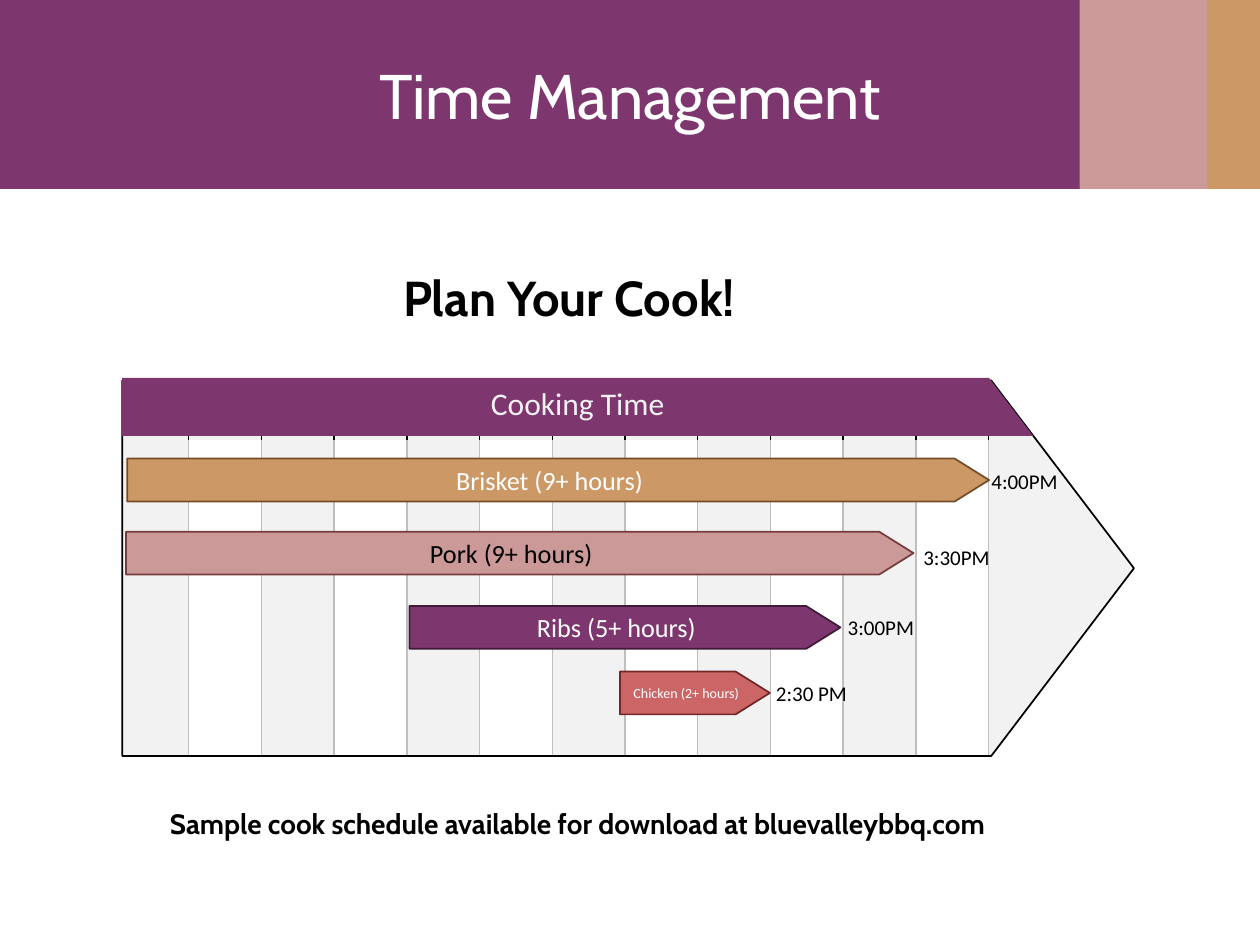
import pptx
import pptx.util
import pptx.dml.color
import pptx.enum.shapes
import pptx.enum.text
import pptx.oxml
import pptx.oxml.ns

Inches = pptx.util.Inches
Pt = pptx.util.Pt
SHAPE = pptx.enum.shapes.MSO_SHAPE
ALIGN = pptx.enum.text.PP_ALIGN
ANCHOR = pptx.enum.text.MSO_ANCHOR


def paint(target, color):
    if hasattr(target, "solid"):
        target.solid()
        target = target.fore_color
    target.rgb = pptx.dml.color.RGBColor.from_string(color)


def write(box, text, font, size, color, align=ALIGN.LEFT, anchor=ANCHOR.TOP, bold=False, wrap=True):
    frame = box.text_frame
    frame.word_wrap = wrap
    frame.vertical_anchor = anchor
    para = frame.paragraphs[0]
    para.alignment = align
    span = para.add_run()
    span.text = text
    span.font.name = font
    span.font.size = Pt(size)
    span.font.bold = bold
    paint(span.font.color, color)


deck = pptx.Presentation()
deck.slide_width = Inches(10)
deck.slide_height = Inches(7.5)
page = deck.slides.add_slide(deck.slide_layouts[6])

bands = [(9.43, 0.57, "CC9966"), (8.53, 1.05, "CC9999"), (0, 8.57, "7E366F")]
for left, width, color in bands:
    band = page.shapes.add_shape(SHAPE.RECTANGLE, Inches(left), 0, Inches(width), Inches(1.5))
    band.shadow.inherit = False
    paint(band.fill, color)
    band.line.fill.background()

title = page.shapes.add_textbox(Inches(0.5), Inches(0.08), Inches(9), Inches(1.33))
write(title, "Time Management", "Cabin", 36, "FFFFFF", ALIGN.CENTER, ANCHOR.MIDDLE)

timeline = page.shapes.add_shape(SHAPE.PENTAGON, Inches(0.97), Inches(3.02), Inches(8.03), Inches(2.98))
timeline.adjustments[0] = 0.38
timeline.shadow.inherit = False
paint(timeline.fill, "F2F2F2")
paint(timeline.line.color, "000000")
timeline.line.width = Pt(1)

columns = 12
grid = page.shapes.add_table(2, columns, Inches(0.92), Inches(3.01), Inches(6.93), Inches(2.98)).table
grid.first_row = False
grid.horz_banding = False
grid.rows[0].height = Inches(0.48)
grid.rows[1].height = Inches(2.5)
for row, border in enumerate(["000000", "BFBFBF"]):
    for column in range(columns):
        cell = grid.cell(row, column)
        if row == 1 and column % 2 == 1:
            paint(cell.fill, "FFFFFF")
        else:
            cell.fill.background()
        properties = cell._tc.get_or_add_tcPr()
        for position, side in enumerate("LRTB"):
            drawn = side == "R" or (side == "L" and column > 0)
            fill = f'<a:solidFill><a:srgbClr val="{border}"/></a:solidFill>' if drawn else "<a:noFill/>"
            line = f'<a:ln{side} {pptx.oxml.ns.nsdecls("a")} w="12700">{fill}</a:ln{side}>'
            properties.insert(position, pptx.oxml.parse_xml(line))

bars = [
    ("Ribs (5+ hours)", 3.25, 4.81, 3.42, "7E366F", "3F1B37", "FFFFFF", 15),
    ("Pork (9+ hours)", 1, 4.22, 6.25, "CC9999", "773B3B", "000000", 15),
    ("Brisket (9+ hours)", 1.01, 3.64, 6.84, "CC9966", "734D26", "FFFFFF", 15),
    ("Chicken (2+ hours)", 4.92, 5.33, 1.19, "CC6666", "732626", "FFFFFF", 8),
]
for text, left, top, width, color, outline, ink, size in bars:
    bar = page.shapes.add_shape(SHAPE.PENTAGON, Inches(left), Inches(top), Inches(width), Inches(0.34))
    bar.adjustments[0] = 0.8
    bar.shadow.inherit = False
    paint(bar.fill, color)
    paint(bar.line.color, outline)
    bar.line.width = Pt(1)
    write(bar, text, "Calibri", size, ink, ALIGN.CENTER, ANCHOR.MIDDLE, wrap=False)

builder = page.shapes.build_freeform(Inches(0.97), Inches(3))
builder.add_line_segments([(Inches(x), Inches(y)) for x, y in [(7.85, 3), (8.2, 3.46), (0.97, 3.46)]])
header = builder.convert_to_shape()
header.shadow.inherit = False
paint(header.fill, "7E366F")
header.line.fill.background()
write(header, "Cooking Time", "Calibri", 18, "F2F2F2", ALIGN.CENTER)

finish_times = [
    ("2:30 PM", 6.06, 5.35),
    ("3:00PM", 6.63, 4.83),
    ("3:30PM", 7.23, 4.27),
    ("4:00PM", 7.77, 3.67),
]
for text, left, top in finish_times:
    label = page.shapes.add_textbox(Inches(left), Inches(top), Inches(0.9), Inches(0.3))
    write(label, text, "Calibri", 12, "000000")

captions = [
    ("Plan Your Cook!", 3.1, 2.07, 4.71, 28),
    ("Sample cook schedule available for download at bluevalleybbq.com", 1.25, 6.35, 7.25, 16),
]
for text, left, top, width, size in captions:
    caption = page.shapes.add_textbox(Inches(left), Inches(top), Inches(width), Inches(0.75))
    write(caption, text, "Cabin", size, "000000", bold=True)

deck.save("out.pptx")
